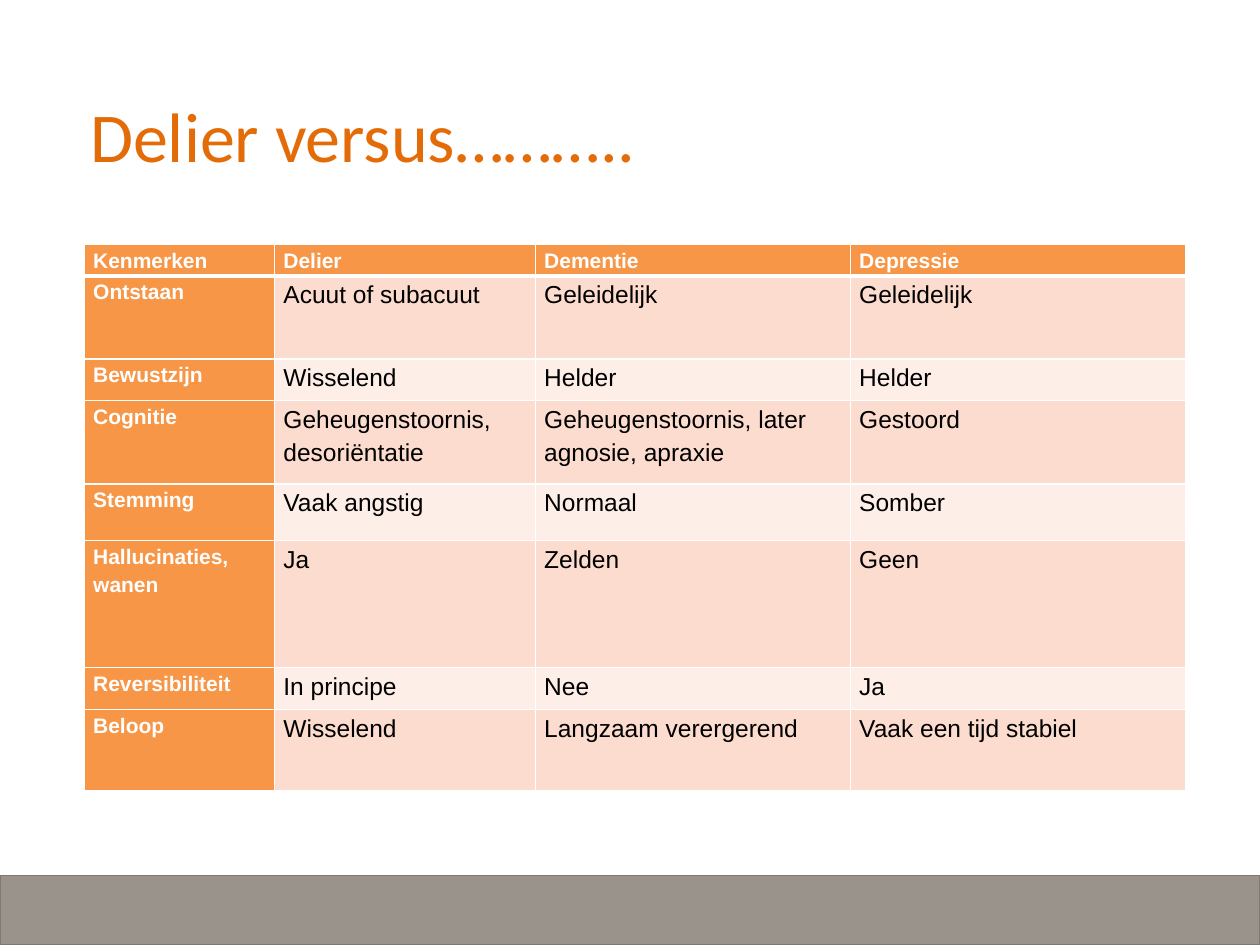
from dataclasses import dataclass

from lxml.etree import SubElement
from pptx import Presentation
from pptx.dml.color import RGBColor
from pptx.enum.shapes import MSO_SHAPE as Shape
from pptx.enum.text import MSO_ANCHOR as Anchor, PP_ALIGN as Align
from pptx.oxml.ns import qn
from pptx.util import Inches, Pt

WHITE, BLACK = "FFFFFF", "000000"
ORANGE, TITLE, GREY = "F79646", "E36C09", "81796F"
BANDS = ("FCDCCE", "FDEEE8")


@dataclass
class Look:
    fill: str
    ink: str
    size: int
    bold: bool


HEAD = Look(ORANGE, WHITE, 12, True)
BODY = [Look(band, BLACK, 14, False) for band in BANDS]

COLS = (1.51, 2.07, 2.5, 2.66)
ROWS = (
    (0.25, "Kenmerken", "Delier", "Dementie", "Depressie"),
    (0.66, "Ontstaan", "Acuut of subacuut", "Geleidelijk", "Geleidelijk"),
    (0.33, "Bewustzijn", "Wisselend", "Helder", "Helder"),
    (0.66, "Cognitie", "Geheugenstoornis, desoriëntatie",
     "Geheugenstoornis, later agnosie, apraxie", "Gestoord"),
    (0.45, "Stemming", "Vaak angstig", "Normaal", "Somber"),
    (1.01, "Hallucinaties, wanen", "Ja", "Zelden", "Geen"),
    (0.33, "Reversibiliteit", "In principe", "Nee", "Ja"),
    (0.65, "Beloop", "Wisselend", "Langzaam verergerend",
     "Vaak een tijd stabiel"),
)


def paint(color, hue: str) -> None:
    color.rgb = RGBColor.from_string(hue)


def edge(cell, side: str, width: float) -> None:
    """Draw a white border on one side (L, R, T or B); call before filling."""
    line = SubElement(cell._tc.get_or_add_tcPr(), qn(f"a:ln{side}"),
                      w=str(Pt(width)))
    fill = SubElement(line, qn("a:solidFill"))
    SubElement(fill, qn("a:srgbClr"), val=WHITE)


def draw_cell(cell, text: str, look: Look, top: int, base: int) -> None:
    for side, width in zip("LRTB", (1, 1, top, base)):
        edge(cell, side, width)
    cell.fill.solid()
    paint(cell.fill.fore_color, look.fill)
    cell.margin_left = cell.margin_right = Inches(0.07)
    cell.margin_top = cell.margin_bottom = 0
    cell.text = text
    para = cell.text_frame.paragraphs[0]
    para.line_spacing = 1.2
    font = para.font
    font.name, font.size, font.bold = "Arial", Pt(look.size), look.bold
    paint(font.color, look.ink)


def draw_title(slide, text: str) -> None:
    box = slide.shapes.add_textbox(
        Inches(0.12), Inches(0.44), Inches(5.52), Inches(1.25))
    frame = box.text_frame
    frame.word_wrap = True
    frame.vertical_anchor = Anchor.MIDDLE
    frame.text = text
    para = frame.paragraphs[0]
    para.alignment = Align.CENTER
    para.font.name, para.font.size = "Calibri", Pt(40)
    paint(para.font.color, TITLE)


def draw_table(slide) -> None:
    table = slide.shapes.add_table(
        len(ROWS), len(COLS), Inches(0.67), Inches(1.94),
        Inches(sum(COLS)), Inches(sum(row[0] for row in ROWS))).table
    for col, width in zip(table.columns, COLS):
        col.width = Inches(width)
    for r, (height, *texts) in enumerate(ROWS):
        table.rows[r].height = Inches(height)
        for c, text in enumerate(texts):
            look = HEAD if r == 0 or c == 0 else BODY[(r - 1) % 2]
            draw_cell(table.cell(r, c), text, look,
                      3 if r == 1 else 1, 3 if r == 0 else 1)


def draw_bar(slide) -> None:
    bar = slide.shapes.add_shape(
        Shape.RECTANGLE, 0, Inches(6.95), Inches(10), Inches(0.55))
    bar.shadow.inherit = False
    bar.fill.solid()
    paint(bar.fill.fore_color, GREY)
    tint = bar._element.spPr.find(qn("a:solidFill")).find(qn("a:srgbClr"))
    SubElement(tint, qn("a:alpha"), val="80000")
    paint(bar.line.color, GREY)
    bar.line.width = Pt(0.75)


def main() -> None:
    deck = Presentation()
    deck.slide_width, deck.slide_height = Inches(10), Inches(7.5)
    slide = deck.slides.add_slide(deck.slide_layouts[6])
    draw_title(slide, "Delier versus………..")
    draw_table(slide)
    draw_bar(slide)
    deck.save("out.pptx")


if __name__ == "__main__":
    main()
